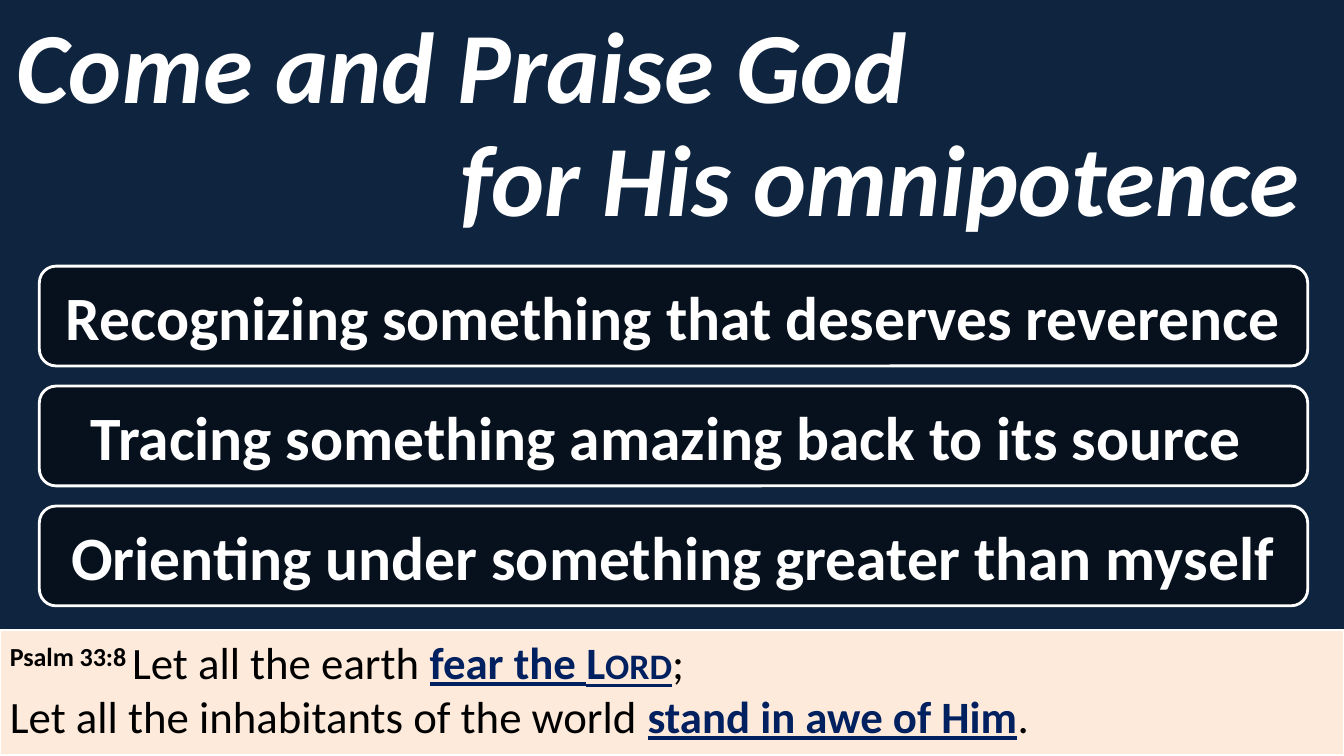
from lxml import etree
from pptx import Presentation
from pptx.dml.color import RGBColor
from pptx.enum.shapes import MSO_SHAPE
from pptx.enum.text import MSO_ANCHOR, MSO_AUTO_SIZE, PP_ALIGN
from pptx.oxml.ns import qn
from pptx.util import Inches, Pt

NAVY = RGBColor(0x0F, 0x24, 0x3E)
DEEP_BLUE = RGBColor(0x00, 0x20, 0x60)
PEACH = RGBColor(0xFD, 0xEA, 0xDA)
BLACK = RGBColor(0x00, 0x00, 0x00)
WHITE = RGBColor(0xFF, 0xFF, 0xFF)

ROUNDED = MSO_SHAPE.ROUNDED_RECTANGLE
CALLOUT = MSO_SHAPE.ROUNDED_RECTANGULAR_CALLOUT
RECTANGLE = MSO_SHAPE.RECTANGLE
TOP, MIDDLE = MSO_ANCHOR.TOP, MSO_ANCHOR.MIDDLE
LEFT, CENTER = PP_ALIGN.LEFT, PP_ALIGN.CENTER
NO_AUTOFIT = MSO_AUTO_SIZE.NONE
TITLE_ONLY = 5

POINTS = [
    "Recognizing something that deserves reverence",
    "Tracing something amazing back to its source ",
    "Orienting under something greater than myself",
]


def add_run(paragraph, text, size, color=WHITE, bold=True, italic=False, underline=False):
    run = paragraph.add_run()
    run.text = text
    font = run.font
    font.name, font.size, font.color.rgb = "Calibri", Pt(size), color
    font.bold, font.italic, font.underline = bold, italic, underline
    return run


def first_paragraph(shape, align, anchor=MIDDLE):
    frame = shape.text_frame
    frame.word_wrap = True
    frame.vertical_anchor = anchor
    paragraph = frame.paragraphs[0]
    paragraph.alignment = align
    return paragraph


def add_panel(slide, preset, left, top, width, height):
    panel = slide.shapes.add_shape(
        preset, Inches(left), Inches(top), Inches(width), Inches(height))
    panel.shadow.inherit = False
    return panel


def outline(panel, weight):
    panel.line.color.rgb = WHITE
    panel.line.width = Pt(weight)


def add_heading(slide, left, top, line_height):
    """Place the two-line heading, its second line stepped to the right."""
    title = slide.shapes.title
    title.left, title.top = Inches(left), Inches(top)
    title.width, title.height = Inches(9.17), Inches(line_height)
    paragraph = first_paragraph(title, CENTER)
    title.text_frame.auto_size = NO_AUTOFIT
    title.text_frame.word_wrap = False
    add_run(paragraph, "Come and Praise God", 72, italic=True)

    second_line = add_panel(slide, CALLOUT, left + 4.42, top + line_height, 9.5, 0.99)
    second_line.fill.background()
    second_line.line.fill.background()
    add_run(first_paragraph(second_line, LEFT), "for His omnipotence", 72, italic=True)


def add_points(slide, left, top, width, height, pitch):
    for index, point in enumerate(POINTS):
        panel = add_panel(slide, ROUNDED, left, top + index * pitch, width, height)
        panel.fill.solid()
        panel.fill.fore_color.rgb = BLACK
        tint = panel.fill._xPr.find(qn("a:solidFill"))[0]
        etree.SubElement(tint, qn("a:alpha")).set("val", "50000")
        outline(panel, 2)
        add_run(first_paragraph(panel, CENTER), point, 44)


def add_verse(slide, left, top, width, height):
    panel = add_panel(slide, RECTANGLE, left, top, width, height)
    panel.fill.solid()
    panel.fill.fore_color.rgb = PEACH
    outline(panel, 1.5)
    verse = first_paragraph(panel, LEFT, TOP)

    def plain(text):
        add_run(verse, text, 32, BLACK, bold=False)

    def stressed(text):
        return add_run(verse, text, 32, DEEP_BLUE, underline=True)

    reference = add_run(verse, "Psalm 33:8 ", 32, BLACK)
    reference.font._element.set("baseline", "30000")
    plain("Let all the earth ")
    stressed("fear the ")
    stressed("Lord").font._element.set("cap", "small")
    plain(";")
    verse.add_line_break()
    plain("Let all the inhabitants of the world ")
    stressed("stand in awe of Him")
    plain(".")


def main():
    prs = Presentation()
    prs.slide_width, prs.slide_height = Inches(13.33), Inches(7.5)
    slide = prs.slides.add_slide(prs.slide_layouts[TITLE_ONLY])
    slide.background.fill.solid()
    slide.background.fill.fore_color.rgb = NAVY
    add_verse(slide, 0, 6.25, 13.33, 1.24)
    add_heading(slide, 0, 0, 1.25)
    add_points(slide, 0.39, 2.64, 12.58, 0.99, 1.19)
    prs.save("out.pptx")


if __name__ == "__main__":
    main()
